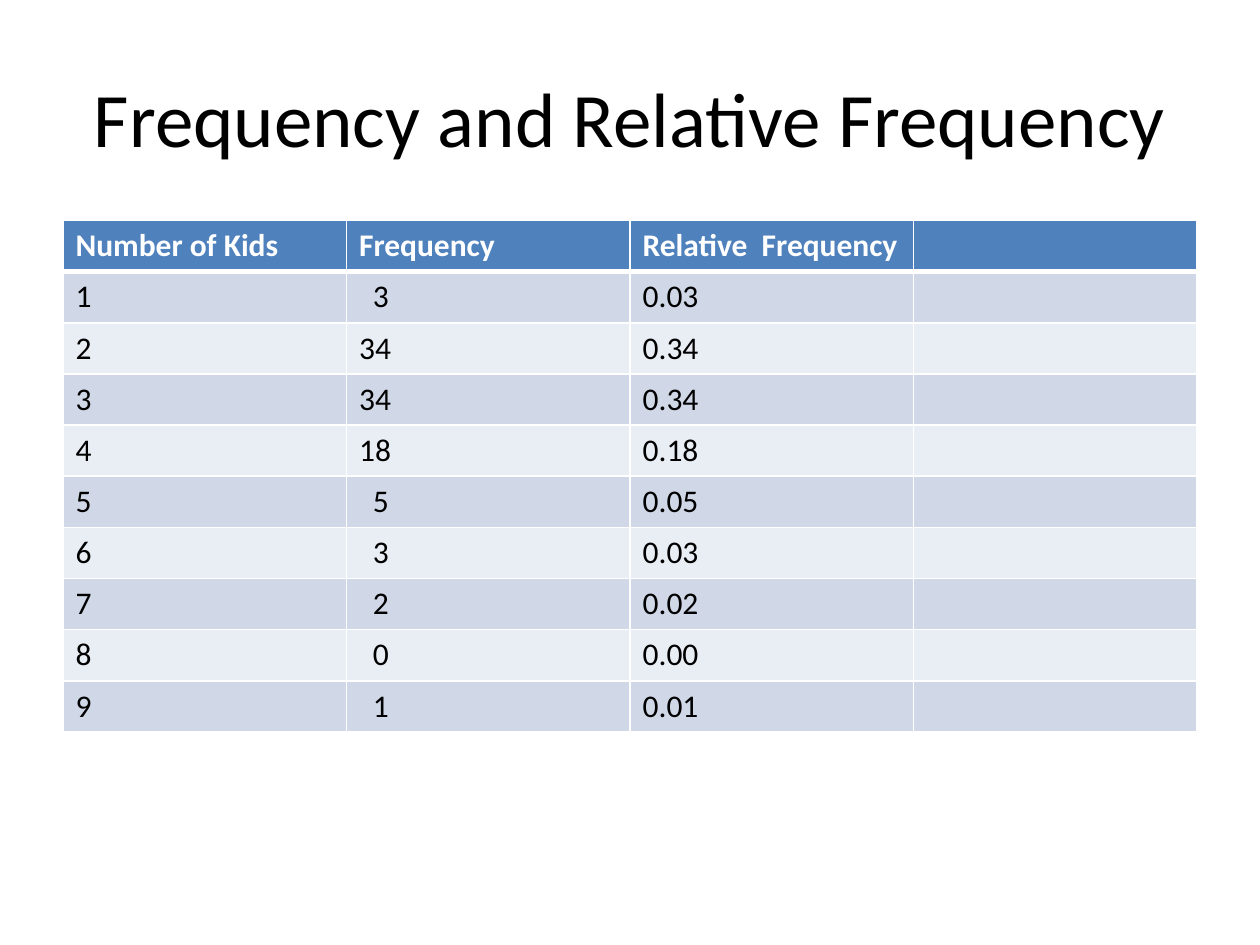
"""Build a slide with a table of frequencies and relative frequencies."""
import pptx
import pptx.dml.color
import pptx.enum.text
import pptx.oxml
import pptx.oxml.ns
import pptx.util
from pptx.util import Inches

TITLE = "Frequency and Relative Frequency"
HEADS = ["Number of Kids", "Frequency", "Relative  Frequency", ""]
COUNTS = [3, 34, 34, 18, 5, 3, 2, 0, 1]
BANDS = ["D0D8E8", "E9EDF4"]
HEAD_FILL, WHITE, BLACK = "4F81BD", "FFFFFF", "000000"
LEFT, WIDTH = 0.5, 9
TOP, HEIGHT = 1.75, 4.06
PAD, INDENT = 0.1, 0.11


def color(code):
    return pptx.dml.color.RGBColor.from_string(code)


def style(par, tone, **form):
    par.font.color.rgb = color(tone)
    for key, val in {"name": "Calibri", **form}.items():
        setattr(par.font, key, val)


def edge(cell, side, points):
    line = pptx.oxml.parse_xml(
        f'<a:ln{side} {pptx.oxml.ns.nsdecls("a")} w="{pptx.util.Pt(points)}">'
        f'<a:solidFill><a:srgbClr val="{WHITE}"/></a:solidFill></a:ln{side}>'
    )
    cell._tc.get_or_add_tcPr().append(line)


def add_title(slide):
    box = slide.shapes.add_textbox(
        Inches(LEFT), Inches(0.3), Inches(WIDTH), Inches(1.25))
    frame = box.text_frame
    frame.word_wrap = True
    frame.vertical_anchor = pptx.enum.text.MSO_ANCHOR.MIDDLE
    par = frame.paragraphs[0]
    par.text = TITLE
    par.alignment = pptx.enum.text.PP_ALIGN.CENTER
    style(par, BLACK, size=pptx.util.Pt(44))


def add_grid(slide):
    total = sum(COUNTS)
    rows = [HEADS] + [
        [str(kids), str(count), f"{count / total:.2f}", ""]
        for kids, count in enumerate(COUNTS, 1)
    ]
    grid = slide.shapes.add_table(
        len(rows), len(HEADS), Inches(LEFT), Inches(TOP),
        Inches(WIDTH), Inches(HEIGHT)).table
    for row, texts in enumerate(rows):
        head = row == 0
        widths = {"L": 1, "R": 1, "T": 3 if row == 1 else 1, "B": 3 if head else 1}
        for col, text in enumerate(texts):
            cell = grid.cell(row, col)
            for side, points in widths.items():
                edge(cell, side, points)
            cell.fill.solid()
            cell.fill.fore_color.rgb = color(HEAD_FILL if head else BANDS[(row - 1) % 2])
            short = col == 1 and len(text) == 1
            cell.margin_left = Inches(PAD + INDENT * short)
            cell.text = text
            style(cell.text_frame.paragraphs[0], WHITE if head else BLACK,
                  size=pptx.util.Pt(18), bold=head)


def main():
    deck = pptx.Presentation()
    deck.slide_width, deck.slide_height = Inches(10), Inches(7.5)
    slide = deck.slides.add_slide(deck.slide_layouts[6])
    add_title(slide)
    add_grid(slide)
    deck.save("out.pptx")


if __name__ == "__main__":
    main()
